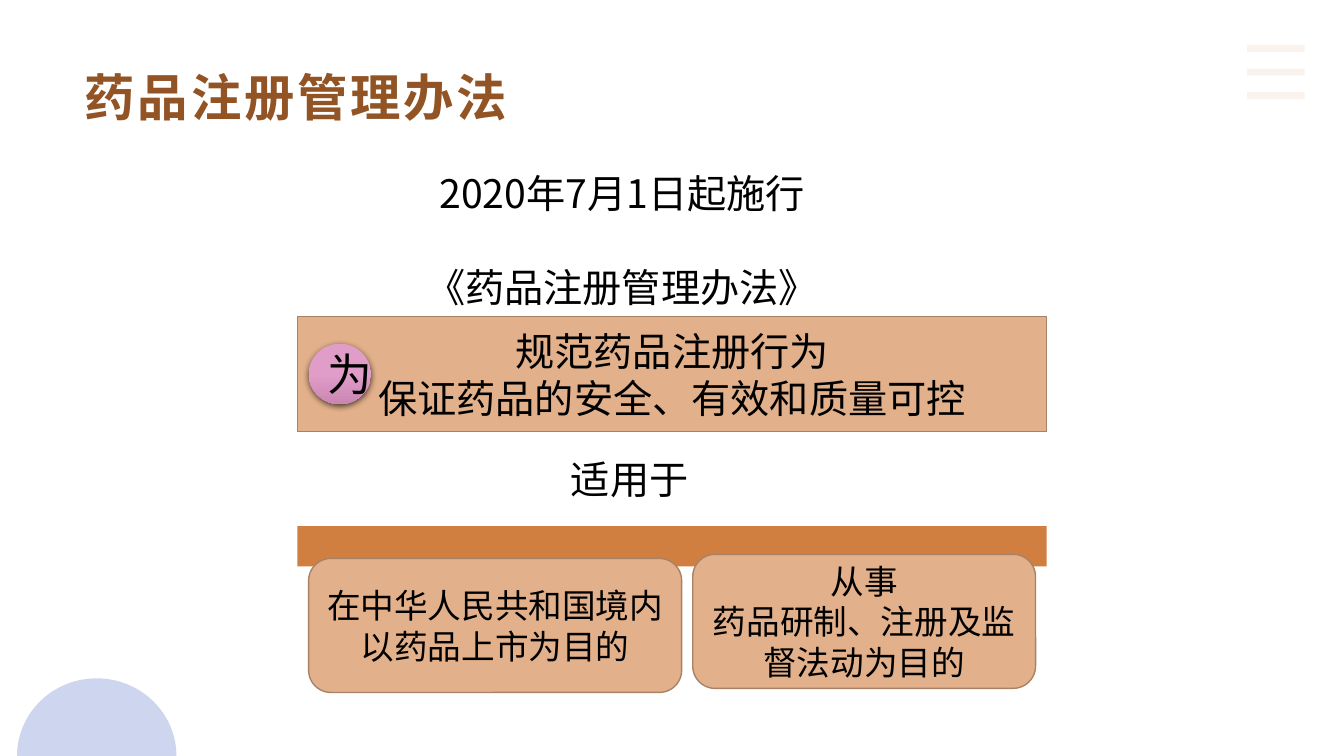
"""Builds a slide on the drug registration measures: purpose and scope."""
from math import cos, pi, sin

from lxml.etree import SubElement
from pptx import Presentation
from pptx.dml.color import RGBColor
from pptx.enum.shapes import MSO_CONNECTOR, MSO_SHAPE
from pptx.enum.text import MSO_ANCHOR, PP_ALIGN
from pptx.oxml.ns import qn
from pptx.util import Inches, Pt

FONT = "Noto Sans CJK SC"
COLORS = {
    "title": "925424", "text": "000000", "panel": "E2B08A", "edge": "A78266",
    "bar": "D07F41", "dome": "9FAEE0", "badge_top": "E09DC8", "badge_bottom": "CB87B3",
}
TITLE = "药品注册管理办法"
TITLE_BOX = (5.55, 8.93, 70.52, 19.2)

# (percent left, top, width, height), fill, edge, size, lines
PANELS = [
    (MSO_SHAPE.RECTANGLE, (22.13, 41.87, 55.74, 15.2), "panel", "edge", 28,
     ["规范药品注册行为", "保证药品的安全、有效和质量可控"]),
    (MSO_SHAPE.RECTANGLE, (22.13, 69.6, 55.74, 5.33), "bar", None, 24, []),
    (MSO_SHAPE.ROUNDED_RECTANGLE, (51.54, 73.33, 25.51, 17.73), "panel", "edge", 24,
     ["从事", "药品研制、注册及监督法动为目的"]),
    (MSO_SHAPE.ROUNDED_RECTANGLE, (22.96, 73.87, 27.76, 17.73), "panel", "edge", 24,
     ["在中华人民共和国境内以药品上市为目的"]),
]
LABELS = [
    ((29.03, 15.47, 34.51, 26.4), 2, ["2020年7月1日起施行", "《药品注册管理办法》"]),
    ((37.81, 59.6, 18.08, 7.6), 1, ["适用于"]),
]
BADGE = ((22.96, 45.47, 4.65, 8), "为")
MENU = {"left": 92.8, "right": 97.07, "top": 6.4, "step": 3.13, "count": 3}
DOME = {"center": 7.2, "half_width": 5.93, "height": 10.27, "steps": 60}

presentation = Presentation()
presentation.slide_width, presentation.slide_height = Inches(13.33), Inches(7.5)
slide = presentation.slides.add_slide(presentation.slide_layouts[5])


def across(percent):
    """Horizontal share of the slide."""
    return round(presentation.slide_width * percent / 100)


def down(percent):
    """Vertical share of the slide."""
    return round(presentation.slide_height * percent / 100)


def place(box):
    """Turn a box of shares into lengths."""
    left, top, width, height = box
    return across(left), down(top), across(width), down(height)


def color(name):
    """Look up a colour by name."""
    return RGBColor.from_string(COLORS[name])


def set_alpha(properties, percent):
    """Make the first solid colour below an element translucent."""
    solid = next(properties.iter(qn("a:srgbClr")))
    SubElement(solid, qn("a:alpha"), val=str(percent * 1000))


def write(frame, lines, size, name="text", align=PP_ALIGN.CENTER, spacing=1.0):
    """Write paragraphs that share one format."""
    frame.word_wrap = True
    frame.text = "\n".join(lines)
    for paragraph in frame.paragraphs:
        paragraph.alignment, paragraph.line_spacing = align, spacing
        font = paragraph.font
        font.size, font.name, font.color.rgb = Pt(size), FONT, color(name)
        properties = paragraph._p.pPr.find(qn("a:defRPr"))
        SubElement(properties, qn("a:ea"), typeface=FONT)


def add_panel(kind, box, fill, edge, size, lines):
    """Add a filled shape with centred text."""
    shape = slide.shapes.add_shape(kind, *place(box))
    shape.shadow.inherit = False
    shape.fill.solid()
    shape.fill.fore_color.rgb = color(fill)
    if edge:
        shape.line.color.rgb, shape.line.width = color(edge), Pt(1)
    else:
        shape.line.fill.background()
    shape.text_frame.vertical_anchor = MSO_ANCHOR.MIDDLE
    if lines:
        write(shape.text_frame, lines, size)
    return shape


def add_menu():
    """Add the pale stacked bars in the corner."""
    for index in range(MENU["count"]):
        height = down(MENU["top"] + index * MENU["step"])
        line = slide.shapes.add_connector(
            MSO_CONNECTOR.STRAIGHT, across(MENU["left"]), height, across(MENU["right"]), height)
        line.line.color.rgb, line.line.width = color("panel"), Pt(5)
        properties = line._element.spPr
        set_alpha(properties, 15)
        SubElement(properties, qn("a:effectLst"))


def add_dome():
    """Add the half disc on the bottom edge."""
    angles = [pi * step / DOME["steps"] for step in range(DOME["steps"] + 1)]
    points = [(across(DOME["center"] - DOME["half_width"] * cos(angle)),
               down(100 - DOME["height"] * sin(angle))) for angle in angles]
    builder = slide.shapes.build_freeform(*points[0])
    builder.add_line_segments(points[1:], close=True)
    dome = builder.convert_to_shape()
    dome.shadow.inherit = False
    dome.fill.solid()
    dome.fill.fore_color.rgb = color("dome")
    dome.line.fill.background()
    set_alpha(dome._element.spPr, 50)


def add_badge():
    """Add the shaded round badge."""
    box, text = BADGE
    badge = add_panel(MSO_SHAPE.OVAL, box, "badge_top", None, 32, [text])
    badge.fill.gradient()
    badge.fill.gradient_angle = 270
    stops = zip(badge.fill.gradient_stops, (0.5, 1), ("badge_top", "badge_bottom"))
    for stop, position, name in stops:
        stop.position, stop.color.rgb = position, color(name)
    effects = badge._element.spPr.find(qn("a:effectLst"))
    shadow = SubElement(effects, qn("a:outerShdw"), blurRad=str(Pt(4.5)), dist=str(Pt(1.5)),
                        dir="5400000", algn="ctr", rotWithShape="0")
    SubElement(shadow, qn("a:srgbClr"), val=COLORS["text"])
    set_alpha(shadow, 63)


def add_title():
    """Fill the title placeholder."""
    title = slide.shapes.title
    title.left, title.top, title.width, title.height = place(TITLE_BOX)
    frame = title.text_frame
    frame.vertical_anchor = MSO_ANCHOR.TOP
    write(frame, [TITLE], 36, "title", PP_ALIGN.LEFT, 0.9)
    font = frame.paragraphs[0].font
    font.bold = True
    frame.paragraphs[0]._p.pPr.find(qn("a:defRPr")).set("spc", "200")


add_menu()
add_dome()
for panel in PANELS:
    add_panel(*panel)
for box, spacing, lines in LABELS:
    label = slide.shapes.add_textbox(*place(box))
    write(label.text_frame, lines, 28, spacing=float(spacing))
add_badge()
add_title()
presentation.save("out.pptx")
